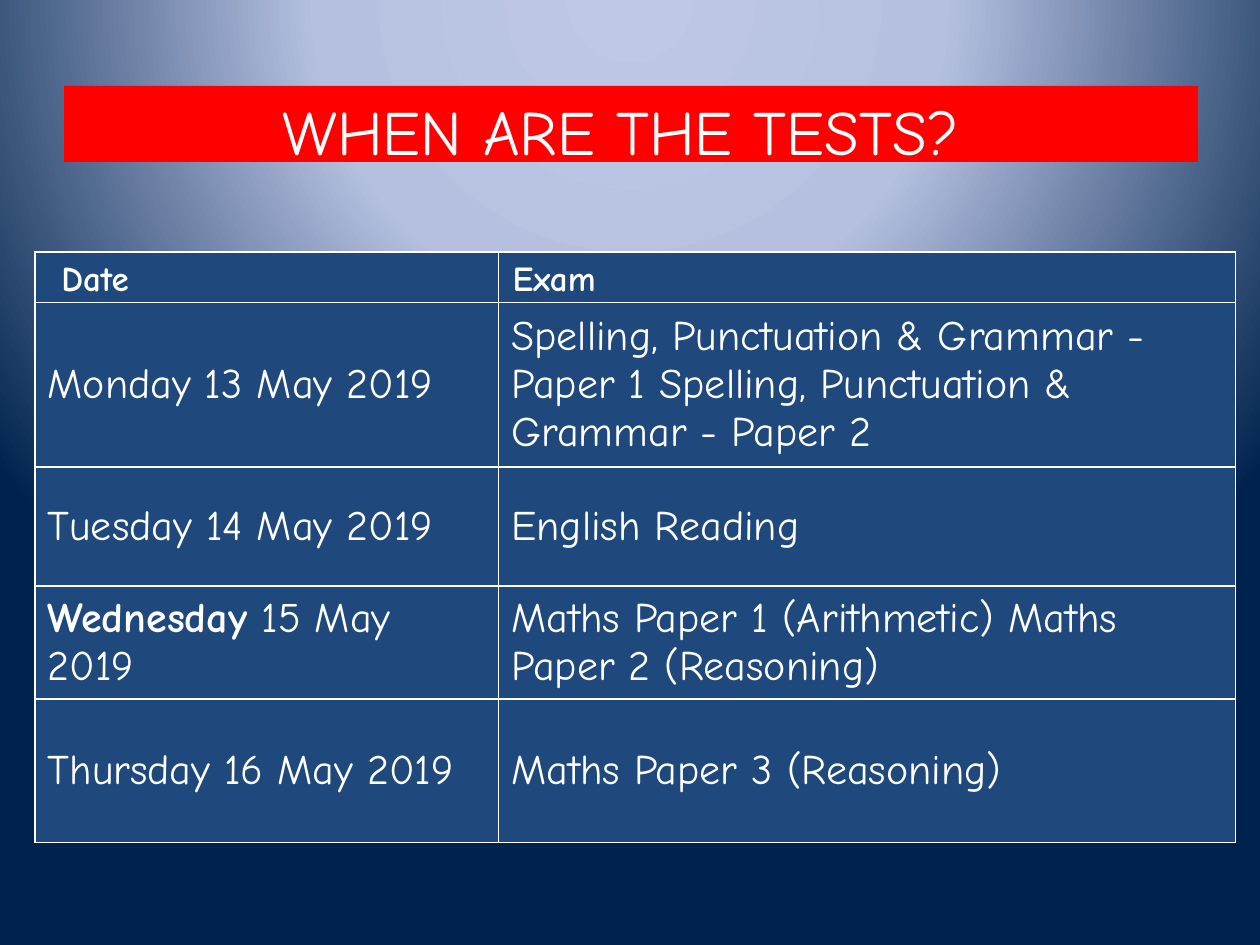
from dataclasses import dataclass

from lxml import etree
from pptx import Presentation
from pptx.dml.color import RGBColor
from pptx.enum import text as t
from pptx.oxml import ns, parse_xml
from pptx.util import Pt


@dataclass(frozen=True)
class Theme:
    font: str = "Comic Neue"
    ink: str = "FFFFFF"
    banner: str = "FF0000"
    cell: str = "1F497D"
    glow: tuple = ((0, "BFC9E5"), (40, "B5C0E0"), (100, "00234D"))
    title_size: int = 36
    head_size: int = 20
    body_size: int = 24
    rule: int = 1


THEME = Theme()
HEADINGS = ("Date", "Exam")
TESTS = (
    ("", "Monday 13 May 2019",
     "Spelling, Punctuation & Grammar - Paper 1 Spelling, Punctuation & Grammar - Paper 2"),
    ("", "Tuesday 14 May 2019", "English Reading"),
    ("Wednesday", " 15 May 2019", "Maths Paper 1 (Arithmetic) Maths Paper 2 (Reasoning)"),
    ("", "Thursday 16 May 2019", "Maths Paper 3 (Reasoning)"),
)
COLUMN_WIDTHS = (265, 421)
ROW_HEIGHTS = (29, 94, 68, 64.5, 82)


def write(paragraph, words, size, bold=False, align=None, line_spacing=None):
    paragraph.alignment = align
    paragraph.line_spacing = line_spacing
    run = paragraph.add_run()
    run.text = words
    run.font.name = THEME.font
    run.font.size = Pt(size)
    run.font.bold = bold
    run.font.color.rgb = RGBColor.from_string(THEME.ink)


def paint_background(slide):
    stops = "".join(
        f'<a:gs pos="{place * 1000}"><a:srgbClr val="{color}"/></a:gs>'
        for place, color in THEME.glow
    )
    background = parse_xml(
        f'<p:bg {ns.nsdecls("p", "a")}><p:bgPr><a:gradFill rotWithShape="1">'
        f'<a:gsLst>{stops}</a:gsLst><a:path path="circle">'
        '<a:fillToRect l="50000" t="-80000" r="50000" b="180000"/></a:path>'
        '</a:gradFill><a:effectLst/></p:bgPr></p:bg>'
    )
    slide.element.cSld.insert(0, background)


def place_title(slide, left, top, width, height):
    banner = slide.shapes.title
    banner.left, banner.top, banner.width, banner.height = map(Pt, (left, top, width, height))
    banner.fill.solid()
    banner.fill.fore_color.rgb = RGBColor.from_string(THEME.banner)
    frame = banner.text_frame
    frame.auto_size = t.MSO_AUTO_SIZE.NONE
    frame.vertical_anchor = t.MSO_ANCHOR.TOP
    write(frame.paragraphs[0], "WHEN ARE THE TESTS? ", THEME.title_size, align=t.PP_ALIGN.CENTER)


def style_cell(cell, margins):
    cell.vertical_anchor = t.MSO_ANCHOR.MIDDLE
    cell.margin_left, cell.margin_top, cell.margin_right, cell.margin_bottom = map(Pt, margins)
    properties = cell._tc.get_or_add_tcPr()
    for side in ("lnL", "lnR", "lnT", "lnB"):
        border = etree.SubElement(properties, ns.qn(f"a:{side}"), w=str(Pt(THEME.rule)))
        paint = etree.SubElement(border, ns.qn("a:solidFill"))
        etree.SubElement(paint, ns.qn("a:srgbClr"), val=THEME.ink)
    cell.fill.solid()
    cell.fill.fore_color.rgb = RGBColor.from_string(THEME.cell)


def place_timetable(slide, left, top):
    timetable = slide.shapes.add_table(
        len(ROW_HEIGHTS), len(COLUMN_WIDTHS), Pt(left), Pt(top),
        Pt(sum(COLUMN_WIDTHS)), Pt(sum(ROW_HEIGHTS)),
    ).table
    timetable.horz_banding = False
    for column, width in zip(timetable.columns, COLUMN_WIDTHS):
        column.width = Pt(width)
    for row, height in zip(timetable.rows, ROW_HEIGHTS):
        row.height = Pt(height)

    for cell, heading, inset in zip(timetable.rows[0].cells, HEADINGS, (15, 8)):
        style_cell(cell, (inset, 0.7, 0.7, 0.7))
        write(cell.text_frame.paragraphs[0], heading, THEME.head_size, bold=True, line_spacing=1.15)

    for row, (stressed, date, exam) in enumerate(TESTS, 1):
        date_cell, exam_cell = timetable.rows[row].cells
        for cell in (date_cell, exam_cell):
            style_cell(cell, (7.2, 3.6, 7.2, 3.6))
        if stressed:
            write(date_cell.text_frame.paragraphs[0], stressed, THEME.body_size, bold=True)
        write(date_cell.text_frame.paragraphs[0], date, THEME.body_size)
        write(exam_cell.text_frame.paragraphs[0], exam, THEME.body_size)


def main():
    deck = Presentation()
    deck.slide_width, deck.slide_height = Pt(720), Pt(540)
    slide = deck.slides.add_slide(deck.slide_layouts[5])
    paint_background(slide)
    place_title(slide, 36.7, 49, 648, 43.5)
    place_timetable(slide, 20, 144)
    deck.save("out.pptx")


if __name__ == "__main__":
    main()
